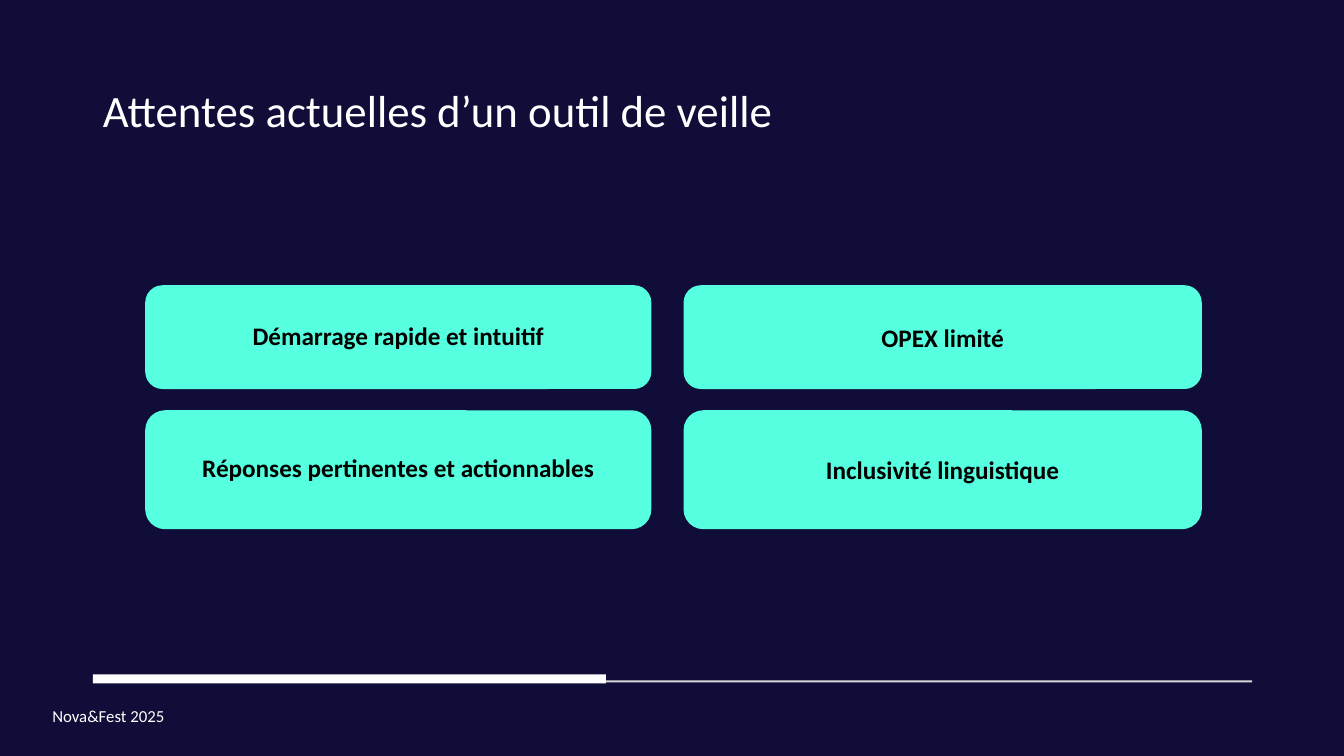
from pptx import Presentation
from pptx.dml.color import RGBColor
from pptx.enum.shapes import MSO_SHAPE
from pptx.enum.text import MSO_ANCHOR, PP_ALIGN
from pptx.util import Inches, Pt

RECT, ROUNDED = MSO_SHAPE.RECTANGLE, MSO_SHAPE.ROUNDED_RECTANGLE
MIDDLE = MSO_ANCHOR.MIDDLE
LEFT, CENTER = PP_ALIGN.LEFT, PP_ALIGN.CENTER
NAVY, MINT, WHITE, GREY, BLACK = "100D39", "55FFDF", "FFFFFF", "D9D9D9", "000000"
EXPECTATIONS = [
    ["Démarrage rapide et intuitif", "OPEX limité"],
    ["Réponses pertinentes et actionnables", "Inclusivité linguistique"],
]


def paint(color_format, color):
    """Set a fill or font colour from a hex string."""
    color_format.rgb = RGBColor.from_string(color)


def write(sp, text, size, color, bold=False, align=LEFT, spacing=1.0):
    """Put one formatted paragraph in a shape."""
    tf = sp.text_frame
    tf.word_wrap = True
    p = tf.paragraphs[0]
    p.text = text
    p.alignment = align
    p.line_spacing = spacing
    r = p.runs[0]
    r.font.name, r.font.size, r.font.bold = "Calibri", Pt(size), bold
    paint(r.font.color, color)


def add_block(s, kind, left, top, width, height, color):
    """Add a filled shape without outline or shadow."""
    sp = s.shapes.add_shape(kind, Inches(left), Inches(top), Inches(width), Inches(height))
    sp.shadow.inherit = False
    sp.fill.solid()
    paint(sp.fill.fore_color, color)
    sp.line.fill.background()
    return sp


def add_title(s, left, top, width, height):
    """Place the slide title in its placeholder."""
    sp = s.shapes.title
    sp.left, sp.top, sp.width, sp.height = map(Inches, (left, top, width, height))
    sp.text_frame.vertical_anchor = MIDDLE
    write(sp, "Attentes actuelles d’un outil de veille", 32, WHITE, spacing=0.9)


def add_cards(s, left, top, widths, heights, gap_x, gap_y):
    """Lay out the expectations as a grid of rounded cards."""
    for row, texts in enumerate(EXPECTATIONS):
        for col, text in enumerate(texts):
            x = left + sum(widths[:col]) + col * gap_x
            y = top + sum(heights[:row]) + row * gap_y
            sp = add_block(s, ROUNDED, x, y, widths[col], heights[row], MINT)
            sp.text_frame.vertical_anchor = MIDDLE
            write(sp, text, 18, BLACK, True, CENTER, 1.0 if col else 0.9)


def add_footer(s, left, top, width):
    """Draw the two-part rule with the event name below it."""
    add_block(s, RECT, left + 5.05, top + 0.06, width - 5.05, 0.02, GREY)
    add_block(s, RECT, left, top, 5.09, 0.09, WHITE)
    sp = s.shapes.add_textbox(Inches(left - 0.5), Inches(top + 0.26), Inches(1.99), Inches(0.3))
    write(sp, "Nova&Fest 2025", 12, WHITE)


def main():
    """Build and save the slide."""
    prs = Presentation()
    prs.slide_width, prs.slide_height = Inches(13.33), Inches(7.5)
    s = prs.slides.add_slide(prs.slide_layouts[5])
    s.background.fill.solid()
    paint(s.background.fill.fore_color, NAVY)
    add_title(s, 0.92, 0.4, 11.5, 1.45)
    add_cards(s, 1.44, 2.83, [5.02, 5.14], [1.03, 1.18], 0.32, 0.21)
    add_footer(s, 0.92, 6.69, 11.5)
    prs.save("out.pptx")


if __name__ == "__main__":
    main()
